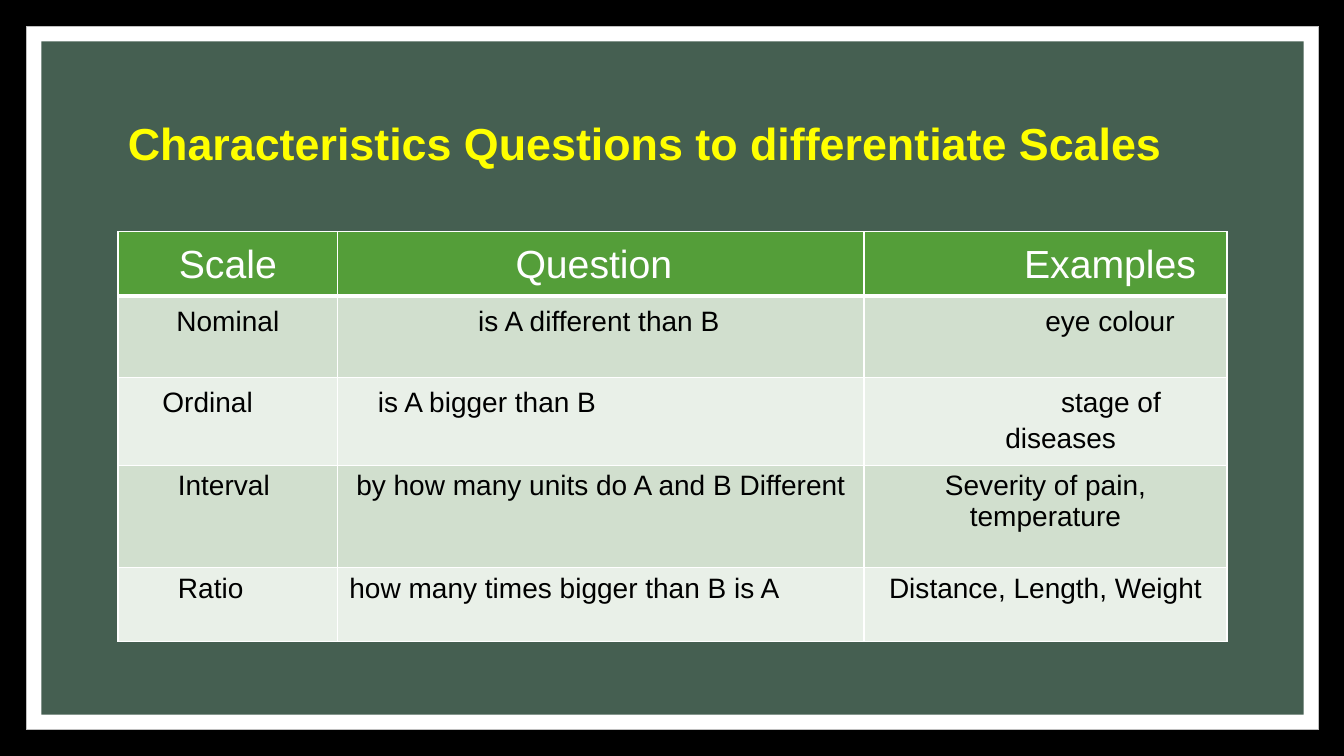
from dataclasses import dataclass

from lxml import etree
from pptx import Presentation
from pptx.dml.color import RGBColor
from pptx.enum import shapes, text
from pptx.oxml import ns
from pptx.util import Inches, Pt


@dataclass(frozen=True)
class Theme:
    font: str = "Arial"
    backdrop: str = "000000"
    frame: str = "FFFFFF"
    frame_edge: str = "BFBFBF"
    board: str = "455F51"
    title: str = "FFFF00"
    header: str = "549E39"
    bands: tuple[str, str] = ("D1DFCE", "E9F0E8")
    header_text: str = "FFFFFF"
    body_text: str = "000000"
    rule: str = "FFFFFF"
    title_size: int = 32
    header_size: int = 28
    body_size: int = 20


@dataclass(frozen=True)
class Entry:
    """Centred cell text; shift moves its centre sideways, in inches."""
    wording: str
    shift: float = 0
    first_indent: float = 0
    side_inset: float = 0.1


@dataclass(frozen=True)
class ScaleRow:
    height: float
    spacing: float
    entries: tuple[Entry, Entry, Entry]


THEME = Theme()
COLUMN_WIDTHS = (2.18, 5.22, 3.6)
ROWS = (
    ScaleRow(0.63, 1.15, (Entry("Scale"), Entry("Question", -0.07), Entry("Examples", 0.64))),
    ScaleRow(0.81, 1.15, (Entry("Nominal"), Entry("is A different than B", -0.02),
                          Entry("eye colour", 0.64))),
    ScaleRow(0.82, 1.15, (Entry("Ordinal", -0.2), Entry("is A bigger than B", -1.13),
                          Entry("stage of diseases", 0.15, first_indent=1, side_inset=0.3))),
    ScaleRow(1.02, 1, (Entry("Interval", -0.04),
                       Entry("by how many units do A and B Different"),
                       Entry("Severity of pain, temperature"))),
    ScaleRow(0.73, 1, (Entry("Ratio", -0.17), Entry("how many times bigger than B is A", -0.36),
                       Entry("Distance, Length, Weight"))),
)


def rgb(value: str) -> RGBColor:
    return RGBColor.from_string(value)


def write(frame, wording: str, *, size: int, color: str, bold: bool = False,
          align=text.PP_ALIGN.LEFT, spacing: float = 1, first_indent: float = 0) -> None:
    frame.word_wrap = True
    paragraph = frame.paragraphs[0]
    paragraph.alignment = align
    paragraph.line_spacing = spacing
    if first_indent:
        properties = paragraph._p.get_or_add_pPr()
        properties.set("marL", "0")
        properties.set("indent", str(Inches(first_indent)))
    run = paragraph.add_run()
    run.text = wording
    run.font.name = THEME.font
    run.font.size = Pt(size)
    run.font.bold = bold
    run.font.color.rgb = rgb(color)


def add_panel(slide, inset: float, width: float, height: float, fill: str,
              edge: str | None = None) -> None:
    panel = slide.shapes.add_shape(shapes.MSO_SHAPE.RECTANGLE, Inches(inset), Inches(inset),
                                   Inches(width), Inches(height))
    panel.shadow.inherit = False
    panel.fill.solid()
    panel.fill.fore_color.rgb = rgb(fill)
    if edge:
        panel.line.color.rgb = rgb(edge)
        panel.line.width = Pt(0.5)
    else:
        panel.line.fill.background()


def add_borders(cell, top: float, bottom: float) -> None:
    properties = cell._tc.get_or_add_tcPr()
    for side, width in (("L", 1), ("R", 1), ("T", top), ("B", bottom)):
        line = etree.SubElement(properties, ns.qn(f"a:ln{side}"), w=str(Pt(width)))
        fill = etree.SubElement(line, ns.qn("a:solidFill"))
        etree.SubElement(fill, ns.qn("a:srgbClr"), val=THEME.rule)


def fill_cell(cell, entry: Entry, row_index: int, spacing: float) -> None:
    is_header = row_index == 0
    add_borders(cell, top=3 if row_index == 1 else 1, bottom=3 if is_header else 1)
    cell.fill.solid()
    cell.fill.fore_color.rgb = rgb(THEME.header if is_header else THEME.bands[(row_index - 1) % 2])
    cell.margin_left = Inches(entry.side_inset + 2 * max(entry.shift, 0))
    cell.margin_right = Inches(entry.side_inset + 2 * max(-entry.shift, 0))
    write(cell.text_frame, entry.wording, align=text.PP_ALIGN.CENTER, spacing=spacing,
          size=THEME.header_size if is_header else THEME.body_size,
          color=THEME.header_text if is_header else THEME.body_text,
          first_indent=entry.first_indent)


def add_scale_table(slide) -> None:
    scales = slide.shapes.add_table(
        len(ROWS), len(COLUMN_WIDTHS), Inches(1.17), Inches(2.3),
        Inches(sum(COLUMN_WIDTHS)), Inches(sum(row.height for row in ROWS))).table
    for column, width in zip(scales.columns, COLUMN_WIDTHS):
        column.width = Inches(width)
    for row_index, row in enumerate(ROWS):
        scales.rows[row_index].height = Inches(row.height)
        for column_index, entry in enumerate(row.entries):
            fill_cell(scales.cell(row_index, column_index), entry, row_index, row.spacing)


def main() -> None:
    deck = Presentation()
    deck.slide_width, deck.slide_height = Inches(13.33), Inches(7.5)
    slide = deck.slides.add_slide(deck.slide_layouts[6])
    slide.background.fill.solid()
    slide.background.fill.fore_color.rgb = rgb(THEME.backdrop)
    add_panel(slide, 0.26, 12.82, 6.98, THEME.frame, THEME.frame_edge)
    add_panel(slide, 0.41, 12.52, 6.68, THEME.board)
    title = slide.shapes.add_textbox(Inches(1.17), Inches(0.7), Inches(11), Inches(1.5))
    title.text_frame.vertical_anchor = text.MSO_ANCHOR.MIDDLE
    write(title.text_frame, "Characteristics Questions to differentiate Scales",
          size=THEME.title_size, color=THEME.title, bold=True, spacing=0.9)
    add_scale_table(slide)
    deck.save("out.pptx")


if __name__ == "__main__":
    main()
